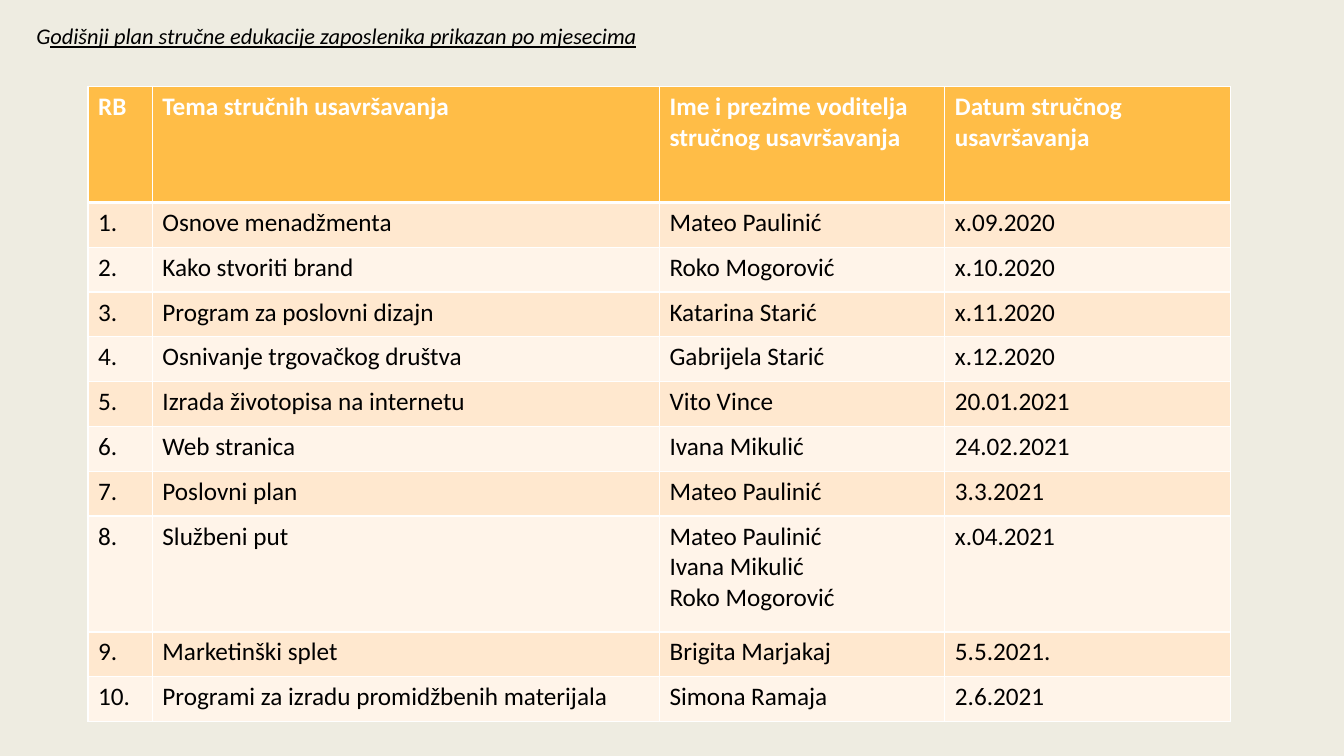
"""Build the slide with the yearly staff training plan."""
from dataclasses import dataclass

from lxml import etree
from pptx import Presentation
from pptx import util as u
from pptx.dml.color import RGBColor
from pptx.enum import text
from pptx.oxml import ns


@dataclass(frozen=True)
class Theme:
    font: str = "Calibri"
    title_size: int = 16
    table_size: int = 18
    background: str = "EEECE1"
    ink: str = "000000"
    header_ink: str = "FFFFFF"
    header_fill: str = "FFBD47"
    odd_fill: str = "FFE8CF"
    even_fill: str = "FFF4E9"
    border: str = "FFFFFF"
    thin: int = 1
    thick: int = 3


@dataclass(frozen=True)
class Training:
    topic: str
    leaders: str
    date: str
    height: float = 1.13


THEME = Theme()
HEADERS = (
    "RB",
    "Tema stručnih usavršavanja",
    "Ime i prezime voditelja stručnog usavršavanja",
    "Datum stručnog usavršavanja",
)
COLUMN_WIDTHS = (1.62, 12.78, 7.19, 7.19)
HEADER_HEIGHT = 2.92
TRAININGS = (
    Training("Osnove menadžmenta", "Mateo Paulinić", "x.09.2020"),
    Training("Kako stvoriti brand", "Roko Mogorović", "x.10.2020"),
    Training("Program za poslovni dizajn", "Katarina Starić", "x.11.2020"),
    Training("Osnivanje trgovačkog društva", "Gabrijela Starić", "x.12.2020"),
    Training("Izrada životopisa na internetu", "Vito Vince", "20.01.2021"),
    Training("Web stranica", "Ivana Mikulić", "24.02.2021"),
    Training("Poslovni plan", "Mateo Paulinić", "3.3.2021"),
    Training("Službeni put", "Mateo Paulinić\nIvana Mikulić\nRoko Mogorović", "x.04.2021", 2.92),
    Training("Marketinški splet", "Brigita Marjakaj", "5.5.2021."),
    Training("Programi za izradu promidžbenih materijala", "Simona Ramaja", "2.6.2021"),
)


def rgb(value: str) -> RGBColor:
    return RGBColor.from_string(value)


def add_title(slide) -> None:
    title = slide.shapes.title
    title.left, title.top, title.width, title.height = map(u.Cm, (0.66, 0.43, 20.07, 0.94))
    frame = title.text_frame
    frame.word_wrap = True
    frame.auto_size = text.MSO_AUTO_SIZE.NONE
    frame.vertical_anchor = text.MSO_ANCHOR.TOP
    paragraph = frame.paragraphs[0]
    paragraph.alignment = text.PP_ALIGN.LEFT
    paragraph.line_spacing = 1.0
    paragraph.add_run().text = "G"
    underlined = paragraph.add_run()
    underlined.text = "odišnji plan stručne edukacije zaposlenika prikazan po mjesecima"
    underlined.font.underline = True
    for run in paragraph.runs:
        run.font.name = THEME.font
        run.font.size = u.Pt(THEME.title_size)
        run.font.italic = True
        run.font.color.rgb = rgb(THEME.ink)


def add_borders(cell, row: int) -> None:
    properties = cell._tc.get_or_add_tcPr()
    widths = {
        "a:lnL": THEME.thin,
        "a:lnR": THEME.thin,
        "a:lnT": THEME.thick if row == 1 else THEME.thin,
        "a:lnB": THEME.thick if row == 0 else THEME.thin,
    }
    for tag, width in widths.items():
        line = etree.SubElement(properties, ns.qn(tag), w=str(u.Pt(width)))
        fill = etree.SubElement(line, ns.qn("a:solidFill"))
        etree.SubElement(fill, ns.qn("a:srgbClr"), val=THEME.border)


def format_cell(cell, content: str, row: int) -> None:
    is_header = row == 0
    add_borders(cell, row)
    body_fill = THEME.odd_fill if row % 2 else THEME.even_fill
    cell.fill.solid()
    cell.fill.fore_color.rgb = rgb(THEME.header_fill if is_header else body_fill)
    cell.text = content
    for paragraph in cell.text_frame.paragraphs:
        paragraph.font.name = THEME.font
        paragraph.font.size = u.Pt(THEME.table_size)
        paragraph.font.bold = is_header
        paragraph.font.color.rgb = rgb(THEME.header_ink if is_header else THEME.ink)


def add_plan(slide) -> None:
    heights = (HEADER_HEIGHT, *(training.height for training in TRAININGS))
    rows = [HEADERS] + [
        (f"{number}.", training.topic, training.leaders, training.date)
        for number, training in enumerate(TRAININGS, 1)
    ]
    table = slide.shapes.add_table(
        len(rows), len(HEADERS), u.Cm(2.22), u.Cm(2.18),
        u.Cm(sum(COLUMN_WIDTHS)), u.Cm(sum(heights)),
    ).table
    for column, width in zip(table.columns, COLUMN_WIDTHS):
        column.width = u.Cm(width)
    for index, (contents, height) in enumerate(zip(rows, heights)):
        table.rows[index].height = u.Cm(height)
        for cell, content in zip(table.rows[index].cells, contents):
            format_cell(cell, content, index)


def main() -> None:
    presentation = Presentation()
    presentation.slide_width, presentation.slide_height = u.Cm(33.87), u.Cm(19.05)
    slide = presentation.slides.add_slide(presentation.slide_layouts[5])
    slide.background.fill.solid()
    slide.background.fill.fore_color.rgb = rgb(THEME.background)
    add_title(slide)
    add_plan(slide)
    presentation.save("out.pptx")


if __name__ == "__main__":
    main()
